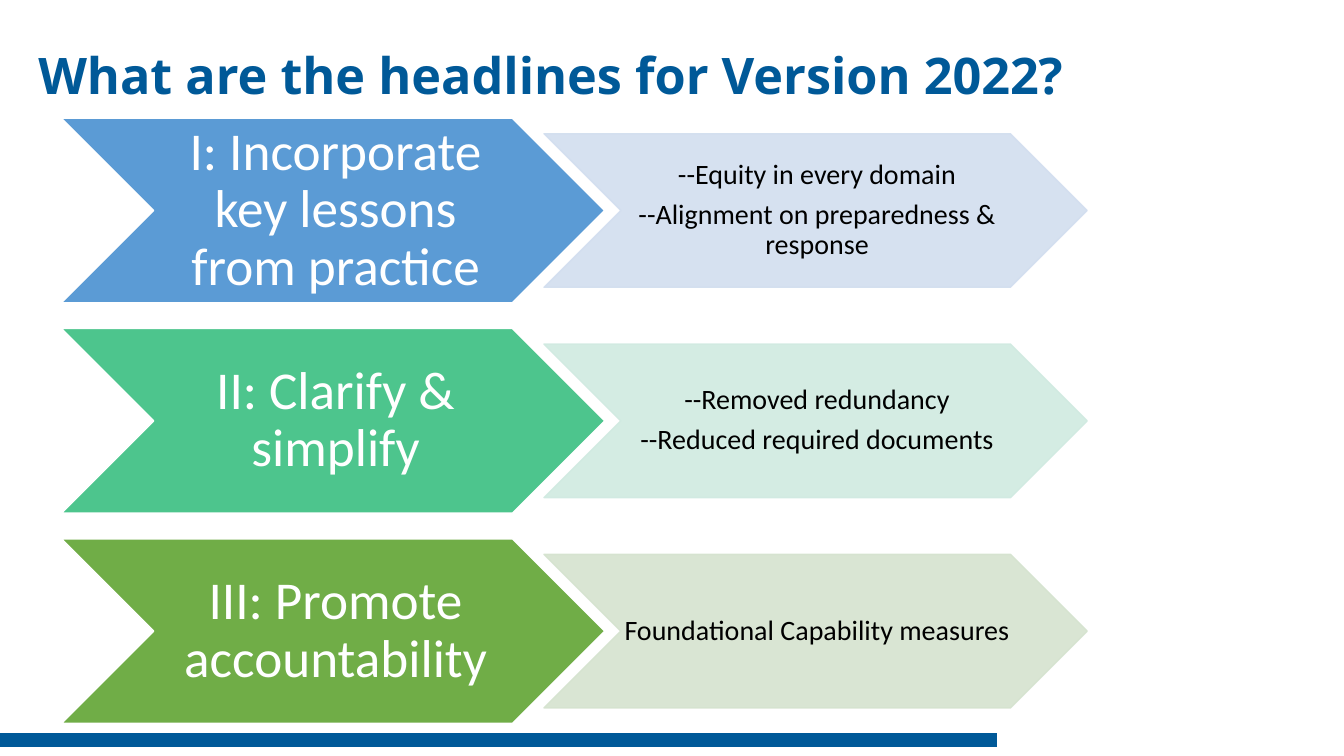
"""Build the slide on the headlines for Version 2022."""
from dataclasses import dataclass

from lxml import etree
from pptx import Presentation
from pptx.dml.color import RGBColor
from pptx.enum.shapes import MSO_CONNECTOR, MSO_SHAPE
from pptx.enum.text import MSO_ANCHOR, MSO_AUTO_SIZE, PP_ALIGN
from pptx.oxml.ns import qn
from pptx.util import Cm, Pt

CHEVRON = MSO_SHAPE.CHEVRON
STRAIGHT = MSO_CONNECTOR.STRAIGHT
MIDDLE = MSO_ANCHOR.MIDDLE
NO_AUTOFIT = MSO_AUTO_SIZE.NONE
LEFT, CENTER = PP_ALIGN.LEFT, PP_ALIGN.CENTER


@dataclass(frozen=True)
class Theme:
    """Fonts, colours and type sizes of the slide."""
    title_font: str = "Open Sans"
    body_font: str = "Calibri"
    brand: str = "005998"
    white: str = "FFFFFF"
    black: str = "000000"
    title_size: int = 36
    headline_size: int = 38
    detail_size: int = 20
    headline_fills: tuple = ("5B9BD5", "4DC58D", "70AD47")
    detail_fills: tuple = ("D2DEEF", "D0EAE1", "D5E3CF")


THEME = Theme()
ROWS = [
    ("I: Incorporate key lessons from practice",
     ["--Equity in every domain", "--Alignment on preparedness & response"]),
    ("II: Clarify & simplify",
     ["--Removed redundancy", "--Reduced required documents"]),
    ("III: Promote accountability", ["Foundational Capability measures"]),
]
ROW_TOP, ROW_PITCH = 2.98, 5.3
CHEVRON_WIDTH = 13.69
HEADLINE_LEFT, HEADLINE_HEIGHT = 1.55, 4.65
DETAIL_LEFT, DETAIL_HEIGHT = 13.71, 3.87
DETAIL_OPACITY = 90


def set_insets(tf, left, top):
    """Set the left inset and equal top and bottom insets, with none at right."""
    tf.margin_left, tf.margin_right = Cm(left), 0
    tf.margin_top = tf.margin_bottom = Cm(top)


def format_paragraph(p, font, size, color, align, bold=False):
    """Format a paragraph and its runs."""
    p.alignment = align
    p.line_spacing = 0.9
    for r in p.runs:
        r.font.name = font
        r.font.size = Pt(size)
        r.font.bold = bold
        r.font.color.rgb = RGBColor.from_string(color)


def set_opacity(sp, percent):
    """Make the fill and line colours of a shape partly transparent."""
    for color in sp._element.spPr.iter(qn("a:srgbClr")):
        etree.SubElement(color, qn("a:alpha")).set("val", str(percent * 1000))


def add_title(slide, text):
    """Place and format the title placeholder."""
    sp = slide.shapes.title
    sp.left, sp.top, sp.width, sp.height = Cm(0.71), Cm(0.43), Cm(29.21), Cm(3.1)
    tf = sp.text_frame
    tf.text = text
    tf.auto_size = NO_AUTOFIT
    tf.vertical_anchor = MIDDLE
    format_paragraph(tf.paragraphs[0], THEME.title_font, THEME.title_size,
                     THEME.brand, LEFT, bold=True)


def add_chevron(slide, left, top, height, fill, line, lines, size, color):
    """Add a chevron with centred paragraphs."""
    sp = slide.shapes.add_shape(CHEVRON, Cm(left), Cm(top),
                                Cm(CHEVRON_WIDTH), Cm(height))
    sp.shadow.inherit = False
    sp.fill.solid()
    sp.fill.fore_color.rgb = RGBColor.from_string(fill)
    sp.line.color.rgb = RGBColor.from_string(line)
    sp.line.width = Pt(1)
    tf = sp.text_frame
    tf.word_wrap = True
    tf.vertical_anchor = MIDDLE
    tf.text = "\n".join(lines)
    for p in tf.paragraphs:
        format_paragraph(p, THEME.body_font, size, color, CENTER)
        p.space_after = Pt(round(size * 0.35))
    return sp


def add_row(slide, index, headline, details):
    """Add a headline chevron and the detail chevron centred beside it."""
    top = ROW_TOP + index * ROW_PITCH
    sp = add_chevron(slide, HEADLINE_LEFT, top, HEADLINE_HEIGHT,
                     THEME.headline_fills[index], THEME.white,
                     [headline], THEME.headline_size, THEME.white)
    set_insets(sp.text_frame, 0.13, 0.07)
    fill = THEME.detail_fills[index]
    sp = add_chevron(slide, DETAIL_LEFT, top + (HEADLINE_HEIGHT - DETAIL_HEIGHT) / 2,
                     DETAIL_HEIGHT, fill, fill,
                     details, THEME.detail_size, THEME.black)
    set_insets(sp.text_frame, 0.07, 0.03)
    set_opacity(sp, DETAIL_OPACITY)


def add_footer_bar(slide):
    """Add the thick line along the bottom edge."""
    y = Cm(18.65)
    line = slide.shapes.add_connector(STRAIGHT, 0, y, Cm(25.12), y)
    line.line.color.rgb = RGBColor.from_string(THEME.brand)
    line.line.width = Pt(10)
    etree.SubElement(line._element.spPr, qn("a:effectLst"))


def main():
    """Build and save the presentation."""
    prs = Presentation()
    prs.slide_width, prs.slide_height = Cm(33.87), Cm(19.05)
    slide = prs.slides.add_slide(prs.slide_layouts[5])
    add_footer_bar(slide)
    add_title(slide, "What are the headlines for Version 2022?")
    for index, (headline, details) in enumerate(ROWS):
        add_row(slide, index, headline, details)
    prs.save("out.pptx")


if __name__ == "__main__":
    main()
